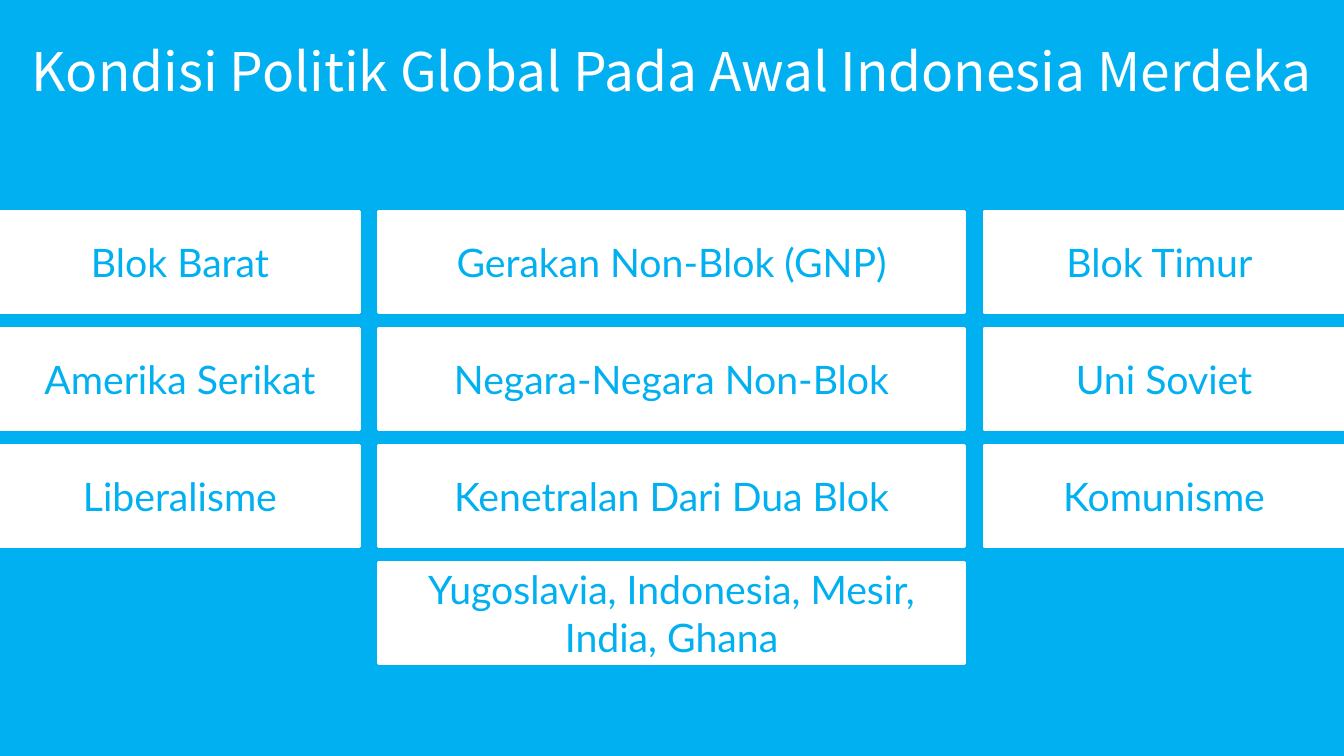
from dataclasses import dataclass

from pptx import Presentation
from pptx.dml.color import RGBColor
from pptx.enum.shapes import MSO_SHAPE
from pptx.enum.text import MSO_ANCHOR, PP_ALIGN
from pptx.slide import Slide
from pptx.text.text import TextFrame
from pptx.util import Inches, Pt

BLUE = RGBColor(0x00, 0xB0, 0xF0)
WHITE = RGBColor(0xFF, 0xFF, 0xFF)
WIDTH, HEIGHT = 13.33, 7.5
TOP, PITCH, TALL = 2.1, 1.16, 1.0


@dataclass(frozen=True)
class Column:
    """A stack of boxes that share a left edge and a width."""

    left: float
    width: float
    labels: tuple[str, ...]


COLUMNS = (
    Column(0, 3.57, ("Blok Barat", "Amerika Serikat", "Liberalisme")),
    Column(3.75, 5.82, (
        "Gerakan Non-Blok (GNP)",
        "Negara-Negara Non-Blok",
        "Kenetralan Dari Dua Blok",
        "Yugoslavia, Indonesia, Mesir, India, Ghana",
    )),
    Column(9.76, 3.57, ("Blok Timur ", "Uni Soviet", "Komunisme")),
)


def write(frame: TextFrame, text: str, size: float, font: str, color: RGBColor) -> None:
    """Put one centred run in a text frame."""
    frame.word_wrap = True
    frame.vertical_anchor = MSO_ANCHOR.MIDDLE
    line = frame.paragraphs[0]
    line.alignment = PP_ALIGN.CENTER
    run = line.add_run()
    run.text = text
    run.font.size = Pt(size)
    run.font.name = font
    run.font.color.rgb = color


def add_title(slide: Slide, text: str) -> None:
    """Place and format the slide title."""
    title = slide.shapes.title
    title.left, title.top = Inches(0), Inches(0.33)
    title.width, title.height = Inches(WIDTH), Inches(0.74)
    write(title.text_frame, text, 38, "Noto Sans CJK TC", WHITE)


def add_column(slide: Slide, column: Column) -> None:
    """Draw the boxes of one column from top to bottom."""
    for row, label in enumerate(column.labels):
        box = slide.shapes.add_shape(
            MSO_SHAPE.RECTANGLE,
            Inches(column.left), Inches(TOP + row * PITCH),
            Inches(column.width), Inches(TALL),
        )
        box.shadow.inherit = False
        box.fill.solid()
        box.fill.fore_color.rgb = WHITE
        box.line.color.rgb = WHITE
        box.line.width = Pt(2)
        write(box.text_frame, label, 28, "Lato", BLUE)


def main() -> None:
    """Build the slide and save it."""
    deck = Presentation()
    deck.slide_width, deck.slide_height = Inches(WIDTH), Inches(HEIGHT)
    slide = deck.slides.add_slide(deck.slide_layouts.get_by_name("Title Only"))
    slide.background.fill.solid()
    slide.background.fill.fore_color.rgb = BLUE
    add_title(slide, "Kondisi Politik Global Pada Awal Indonesia Merdeka")
    for column in COLUMNS:
        add_column(slide, column)
    deck.save("out.pptx")


if __name__ == "__main__":
    main()
